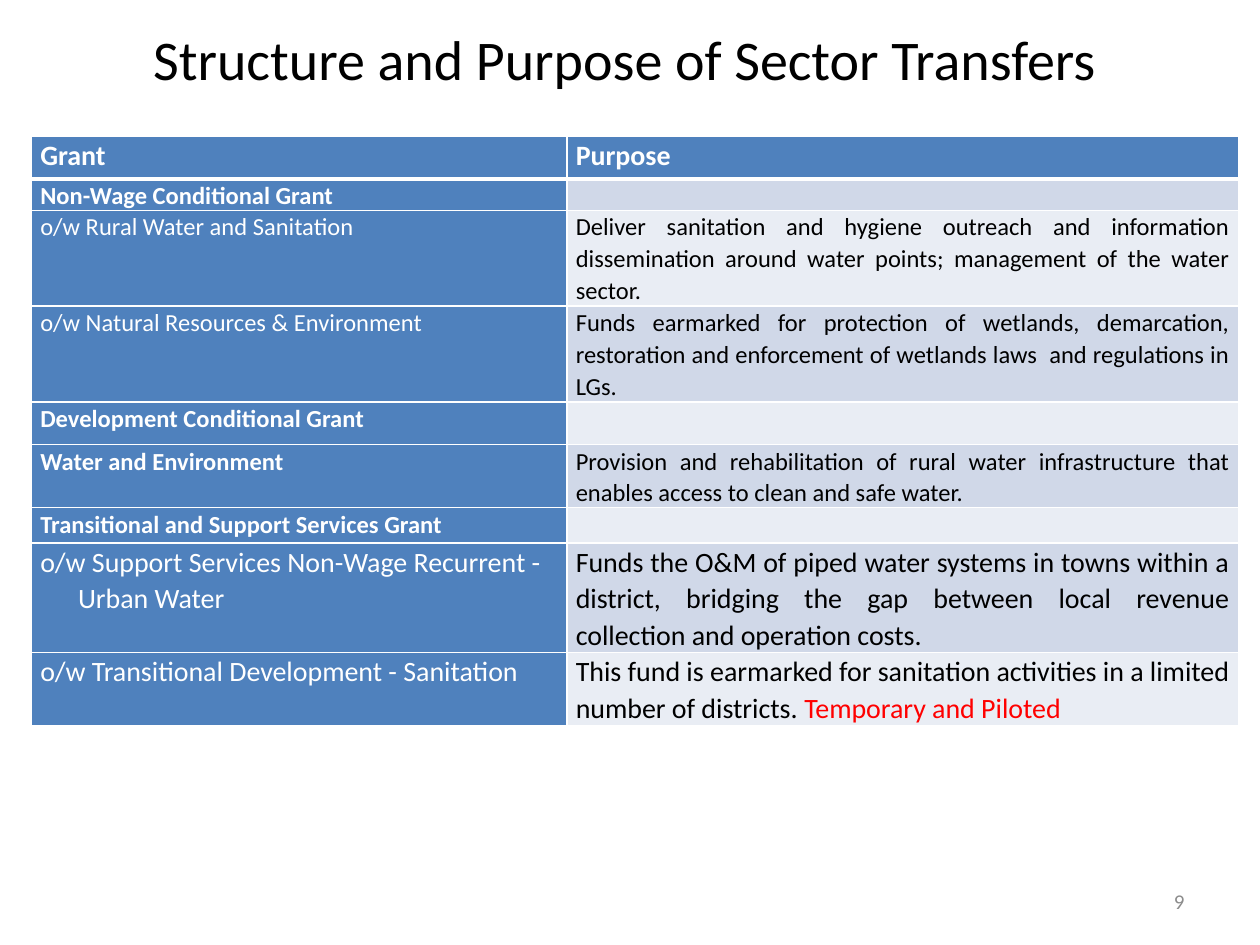
from lxml.etree import SubElement
from pptx import Presentation
from pptx.dml.color import RGBColor
from pptx.enum.text import MSO_ANCHOR as ANCHOR, PP_ALIGN as ALIGN
from pptx.oxml.ns import qn
from pptx.util import Inches, Pt

THEME = {
    "font": "Calibri", "title": 32, "large": 16, "body": 14, "number": 12,
    "dark": "000000", "light": "FFFFFF", "muted": "8C8C8C", "accent": "FF0000",
    "head": "4F81BD", "bands": ("D0D8E8", "E9EDF4"), "rule": 1, "head_rule": 3,
}
TITLE = "Structure and Purpose of Sector Transfers"
PAGE = "9"
HEADER = ("Grant", "Purpose")
# grant, style of grant, purpose, vertical anchor of purpose, size, row height
GRANTS = [
    ("Non-Wage Conditional Grant", "bold", "", "top", "body", 0.25),
    ("o/w Rural Water and Sanitation", "hang",
     "Deliver sanitation and hygiene outreach and information dissemination "
     "around water points; management of the water sector.",
     "middle", "body", 0.76),
    ("o/w Natural Resources & Environment", "hang",
     "Funds earmarked for protection of wetlands, demarcation, restoration "
     "and enforcement of wetlands laws  and regulations in LGs.",
     "middle", "body", 0.76),
    ("Development Conditional Grant", "bold", "", "top", "body", 0.34),
    ("Water and Environment", "bold",
     "Provision and rehabilitation of rural water infrastructure that enables "
     "access to clean and safe water.", "top", "body", 0.5),
    ("Transitional and Support Services Grant", "bold", "", "top", "body", 0.28),
    ("o/w Support Services Non-Wage Recurrent - Urban Water", "hang",
     "Funds the O&M of piped water systems in towns within a district, "
     "bridging the gap between local revenue collection and operation costs.",
     "middle", "large", 0.87),
    ("o/w Transitional Development - Sanitation", "hang",
     "This fund is earmarked for sanitation activities in a limited number "
     "of districts. ", "middle", "large", 0.58),
]
HIGHLIGHT = "Temporary and Piloted "  # closes the last purpose
HEADER_HEIGHT = 0.34
COLUMNS = (4.25, 5.33)
HANG = 0.3


def set_all(obj, values):
    for name, value in values.items():
        setattr(obj, name, value)


def add_run(p, text, size, color, bold=False):
    r = p.add_run()
    r.text = text
    set_all(r.font, {"name": THEME["font"], "size": Pt(THEME[size]), "bold": bold})
    r.font.color.rgb = RGBColor.from_string(THEME[color])


def add_label(slide, text, box, size, color, align):
    tf = slide.shapes.add_textbox(*map(Inches, box)).text_frame
    set_all(tf, {"word_wrap": True, "vertical_anchor": ANCHOR.MIDDLE})
    p = tf.paragraphs[0]
    p.alignment = align
    add_run(p, text, size, color)


def set_borders(cell, **widths):
    tc_pr = cell._tc.get_or_add_tcPr()
    for side in ("lnL", "lnR", "lnT", "lnB"):
        width = widths.get(side, THEME["rule"])
        ln = SubElement(tc_pr, qn(f"a:{side}"), w=str(Pt(width)))
        fill = SubElement(ln, qn("a:solidFill"))
        SubElement(fill, qn("a:srgbClr"), val=THEME["light"])


def fill_cell(cell, text, size, color, fill, bold=False, hang=False,
              align=ALIGN.LEFT, anchor=ANCHOR.TOP, **borders):
    """Write one cell; borders override the default rule width by side."""
    set_borders(cell, **borders)
    side = Inches(0.07)
    set_all(cell, {"margin_left": side, "margin_right": side, "margin_top": 0,
                   "margin_bottom": 0, "vertical_anchor": anchor})
    cell.fill.solid()
    cell.fill.fore_color.rgb = RGBColor.from_string(fill)
    p = cell.text_frame.paragraphs[0]
    set_all(p, {"alignment": align, "line_spacing": 1.07})
    if hang:
        p_pr = p._p.get_or_add_pPr()
        p_pr.set("marL", str(Inches(HANG)))
        p_pr.set("indent", str(-Inches(HANG)))
    if text:
        add_run(p, text, size, color, bold)
    else:  # keeps an empty row from growing to the default type size
        SubElement(p._p, qn("a:endParaRPr"), sz=str(THEME[size] * 100))
    return p


def add_grant_table(slide):
    heights = [HEADER_HEIGHT] + [grant[-1] for grant in GRANTS]
    box = (0.25, 1.08, sum(COLUMNS), sum(heights))
    table = slide.shapes.add_table(len(heights), len(COLUMNS),
                                   *map(Inches, box)).table
    table.horz_banding = False
    for column, width in zip(table.columns, COLUMNS):
        column.width = Inches(width)
    for row, height in zip(table.rows, heights):
        row.height = Inches(height)

    for c, text in enumerate(HEADER):
        fill_cell(table.cell(0, c), text, "large", "light", THEME["head"],
                  bold=True, lnB=THEME["head_rule"])
    for i, (grant, style, purpose, anchor, size, _) in enumerate(GRANTS):
        borders = {"lnT": THEME["head_rule"]} if i == 0 else {}
        fill_cell(table.cell(i + 1, 0), grant, size, "light", THEME["head"],
                  bold=style == "bold", hang=style == "hang", **borders)
        p = fill_cell(table.cell(i + 1, 1), purpose, size, "dark",
                      THEME["bands"][i % 2], align=ALIGN.JUSTIFY,
                      anchor=ANCHOR[anchor.upper()], **borders)
    add_run(p, HIGHLIGHT, "large", "accent")


def main():
    prs = Presentation()
    set_all(prs, {"slide_width": Inches(10), "slide_height": Inches(7.5)})
    slide = prs.slides.add_slide(prs.slide_layouts[6])
    add_label(slide, TITLE, (0, 0, 9.92, 0.92), "title", "dark", ALIGN.CENTER)
    add_label(slide, PAGE, (7.17, 6.95, 2.33, 0.4), "number", "muted", ALIGN.RIGHT)
    add_grant_table(slide)
    prs.save("out.pptx")


if __name__ == "__main__":
    main()
